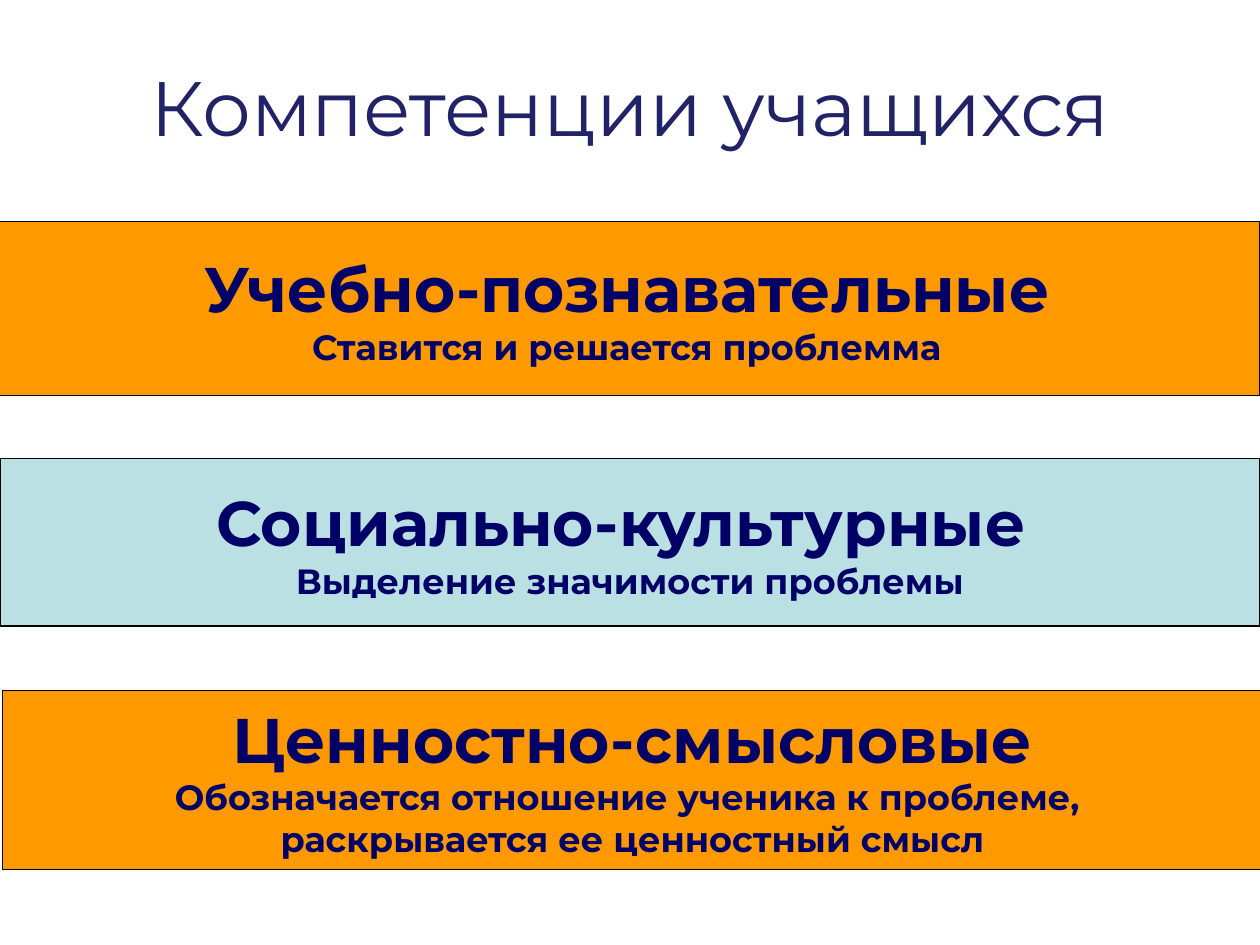
from pptx import Presentation
from pptx.dml.color import RGBColor
from pptx.enum import shapes, text
from pptx.util import Inches, Pt

THEME = {
    "font": "Montserrat",
    "title": "222267", "ink": "000066", "edge": "000000",
    "warm": "FF9900", "cool": "BBE0E3",
    "head": 44, "name": 36, "note": 20, "line": 0.75,
}

# Content
TITLE = "Компетенции учащихся"
BANDS = [  # box, fill, name, notes
    ((-0.05, 1.76, 10.05, 1.38), "warm", "Учебно-познавательные",
     ["Ставится и решается проблемма"]),
    ((0, 3.64, 10, 1.33), "cool", "Социально-культурные ",
     ["Выделение значимости проблемы"]),
    ((0.02, 5.48, 10, 1.42), "warm", "Ценностно-смысловые",
     ["Обозначается отношение ученика к проблеме, ",
      "раскрывается ее ценностный смысл"]),
]


def tint(key):
    return RGBColor.from_string(THEME[key])


def write(frame, lines, color, bold):
    frame.vertical_anchor = text.MSO_ANCHOR.MIDDLE
    for i, (words, size) in enumerate(lines):
        par = frame.add_paragraph() if i else frame.paragraphs[0]
        par.alignment = text.PP_ALIGN.CENTER
        run = par.add_run()
        run.text = words
        font = run.font
        font.name, font.size, font.bold = THEME["font"], Pt(THEME[size]), bold
        font.color.rgb = tint(color)


def add_band(slide, box, fill, name, notes):
    band = slide.shapes.add_shape(shapes.MSO_SHAPE.RECTANGLE, *map(Inches, box))
    band.shadow.inherit = False
    band.fill.solid()
    band.fill.fore_color.rgb = tint(fill)
    band.line.color.rgb = tint("edge")
    band.line.width = Pt(THEME["line"])
    band.text_frame.word_wrap = False
    lines = [(name, "name")] + [(note, "note") for note in notes]
    write(band.text_frame, lines, "ink", True)


def main():
    deck = Presentation()
    deck.slide_width, deck.slide_height = Inches(10), Inches(7.5)
    slide = deck.slides.add_slide(deck.slide_layouts[6])

    # Title
    head = slide.shapes.add_textbox(*map(Inches, (0.5, 0.38, 9, 0.92)))
    head.text_frame.word_wrap = True
    write(head.text_frame, [(TITLE, "head")], "title", False)

    # Bands
    for band in BANDS:
        add_band(slide, *band)

    deck.save("out.pptx")


if __name__ == "__main__":
    main()
